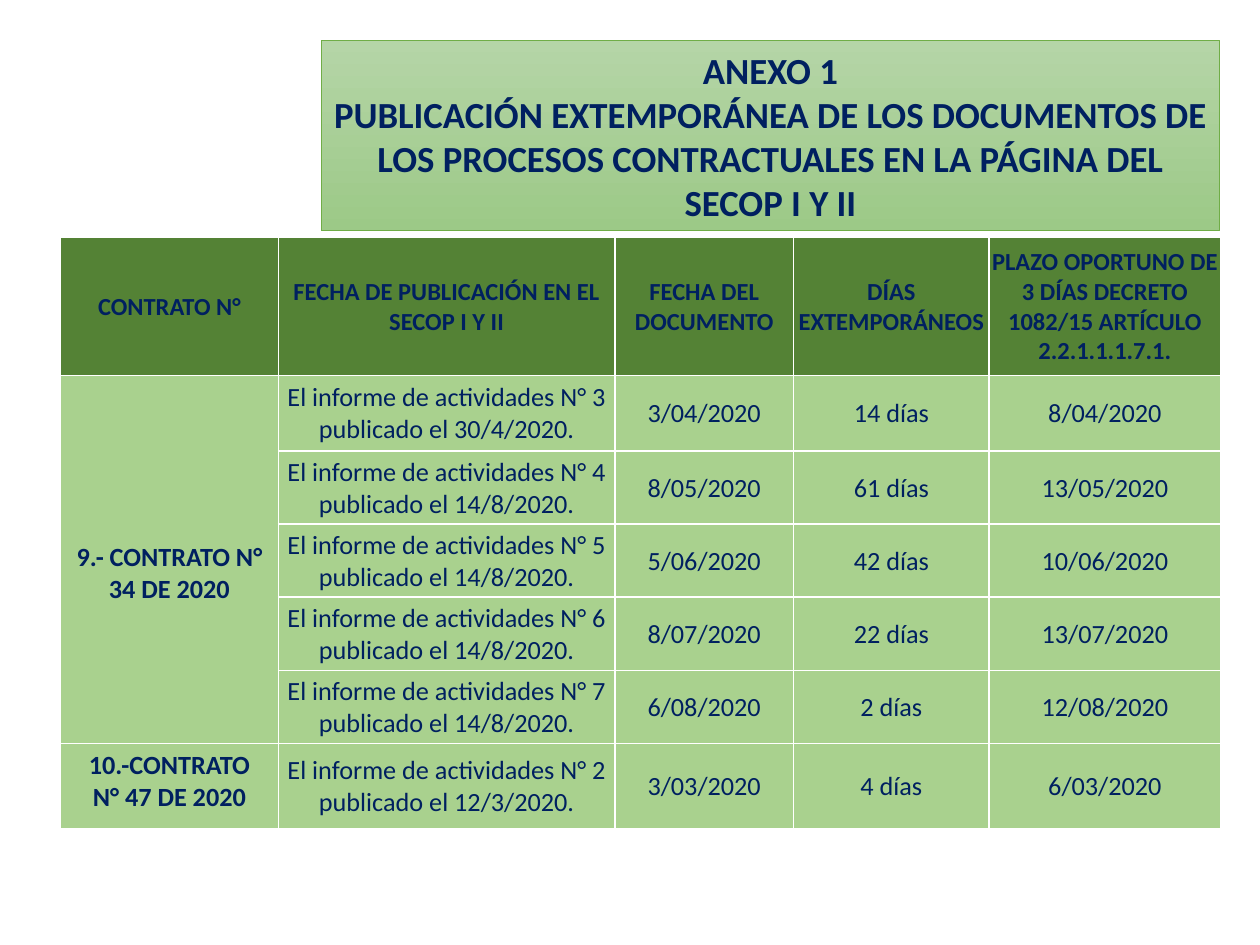
from dataclasses import dataclass

from pptx import Presentation
from pptx.dml.color import RGBColor as Rgb
from pptx.enum.shapes import MSO_SHAPE as Shape
from pptx.enum.text import MSO_ANCHOR as Anchor, PP_ALIGN as Align
from pptx.util import Inches, Pt


@dataclass(frozen=True)
class Theme:
    font: str = "Calibri"
    ink: str = "002060"
    header: str = "548235"
    body: str = "A9D18E"
    banner: tuple = ("B5D5A7", "9CC987")
    banner_line: str = "70AD47"
    title_size: int = 21
    header_size: int = 14
    body_size: int = 15


THEME = Theme()
TITLE = [
    "ANEXO 1",
    "PUBLICACIÓN EXTEMPORÁNEA DE LOS DOCUMENTOS DE LOS PROCESOS "
    "CONTRACTUALES EN LA PÁGINA DEL SECOP I Y II",
]
HEADERS = [
    ["CONTRATO N°"],
    ["FECHA DE PUBLICACIÓN EN EL SECOP I Y II"],
    ["FECHA DEL", "DOCUMENTO"],
    ["DÍAS EXTEMPORÁNEOS"],
    ["PLAZO OPORTUNO DE 3 DÍAS DECRETO 1082/15 ARTÍCULO 2.2.1.1.1.7.1."],
]
CONTRACTS = [
    ("9.- CONTRATO N° 34 DE 2020", [
        (3, "30/4/2020", "3/04/2020", "14 días", "8/04/2020"),
        (4, "14/8/2020", "8/05/2020", "61 días", "13/05/2020"),
        (5, "14/8/2020", "5/06/2020", "42 días", "10/06/2020"),
        (6, "14/8/2020", "8/07/2020", "22 días", "13/07/2020"),
        (7, "14/8/2020", "6/08/2020", "2 días", "12/08/2020"),
    ]),
    ("10.-CONTRATO N° 47 DE 2020", [
        (2, "12/3/2020", "3/03/2020", "4 días", "6/03/2020"),
    ]),
]
COLUMN_WIDTHS = [1.73, 2.67, 1.42, 1.55, 1.84]
ROW_HEIGHTS = [1.1, 0.6, 0.58, 0.58, 0.58, 0.58, 0.68]


def write(frame, paragraphs, size, bold):
    """Fill a text frame with centred paragraphs, breaking lines at newlines."""
    for index, text in enumerate(paragraphs):
        paragraph = frame.add_paragraph() if index else frame.paragraphs[0]
        paragraph.alignment = Align.CENTER
        for number, line in enumerate(text.split("\n")):
            if number:
                paragraph.add_line_break()
            run = paragraph.add_run()
            run.text = line
            run.font.name = THEME.font
            run.font.size = Pt(size)
            run.font.bold = bold
            run.font.color.rgb = Rgb.from_string(THEME.ink)


def paint(cell, color):
    """Give a cell a solid fill."""
    cell.fill.solid()
    cell.fill.fore_color.rgb = Rgb.from_string(color)


def fill_cell(cell, paragraphs, color, size, bold):
    """Write a tight, vertically centred cell."""
    paint(cell, color)
    cell.vertical_anchor = Anchor.MIDDLE
    cell.margin_left = cell.margin_top = cell.margin_right = Inches(0.01)
    cell.margin_bottom = 0
    write(cell.text_frame, paragraphs, size, bold)


def add_banner(slide):
    """Add the gradient title banner."""
    banner = slide.shapes.add_shape(
        Shape.RECTANGLE, Inches(2.55), Inches(0.32), Inches(7.13), Inches(1.51))
    banner.shadow.inherit = False
    banner.fill.gradient()
    banner.fill.gradient_angle = 270
    for stop, color in zip(banner.fill.gradient_stops, THEME.banner):
        stop.color.rgb = Rgb.from_string(color)
    banner.line.color.rgb = Rgb.from_string(THEME.banner_line)
    banner.line.width = Pt(0.5)
    banner.text_frame.word_wrap = True
    banner.text_frame.vertical_anchor = Anchor.MIDDLE
    write(banner.text_frame, TITLE, THEME.title_size, True)


def add_contracts(slide):
    """Add the table of late publications, grouped by contract."""
    table = slide.shapes.add_table(
        len(ROW_HEIGHTS), len(COLUMN_WIDTHS), Inches(0.48), Inches(1.88),
        Inches(sum(COLUMN_WIDTHS)), Inches(sum(ROW_HEIGHTS))).table
    for column, width in zip(table.columns, COLUMN_WIDTHS):
        column.width = Inches(width)
    for row, height in zip(table.rows, ROW_HEIGHTS):
        row.height = Inches(height)
    for column, header in enumerate(HEADERS):
        fill_cell(table.cell(0, column), header, THEME.header, THEME.header_size, True)

    first = 1
    for contract, reports in CONTRACTS:
        contract_cell = table.cell(first, 0)
        for row, (report, published, *details) in enumerate(reports, first):
            paint(table.cell(row, 0), THEME.body)
            notice = f"El informe de actividades N° {report}\npublicado el {published}."
            for column, text in enumerate([notice, *details], 1):
                fill_cell(table.cell(row, column), [text], THEME.body,
                          THEME.body_size, False)
        if len(reports) > 1:
            contract_cell.merge(table.cell(first + len(reports) - 1, 0))
            contract_cell.vertical_anchor = Anchor.MIDDLE
            contract_cell.margin_top = Inches(0.28)
        write(contract_cell.text_frame, [contract], THEME.body_size, True)
        first += len(reports)


def main():
    """Build and save the annex slide."""
    deck = Presentation()
    deck.slide_width, deck.slide_height = Inches(10), Inches(7.5)
    slide = deck.slides.add_slide(deck.slide_layouts[6])
    add_banner(slide)
    add_contracts(slide)
    deck.save("out.pptx")


if __name__ == "__main__":
    main()
